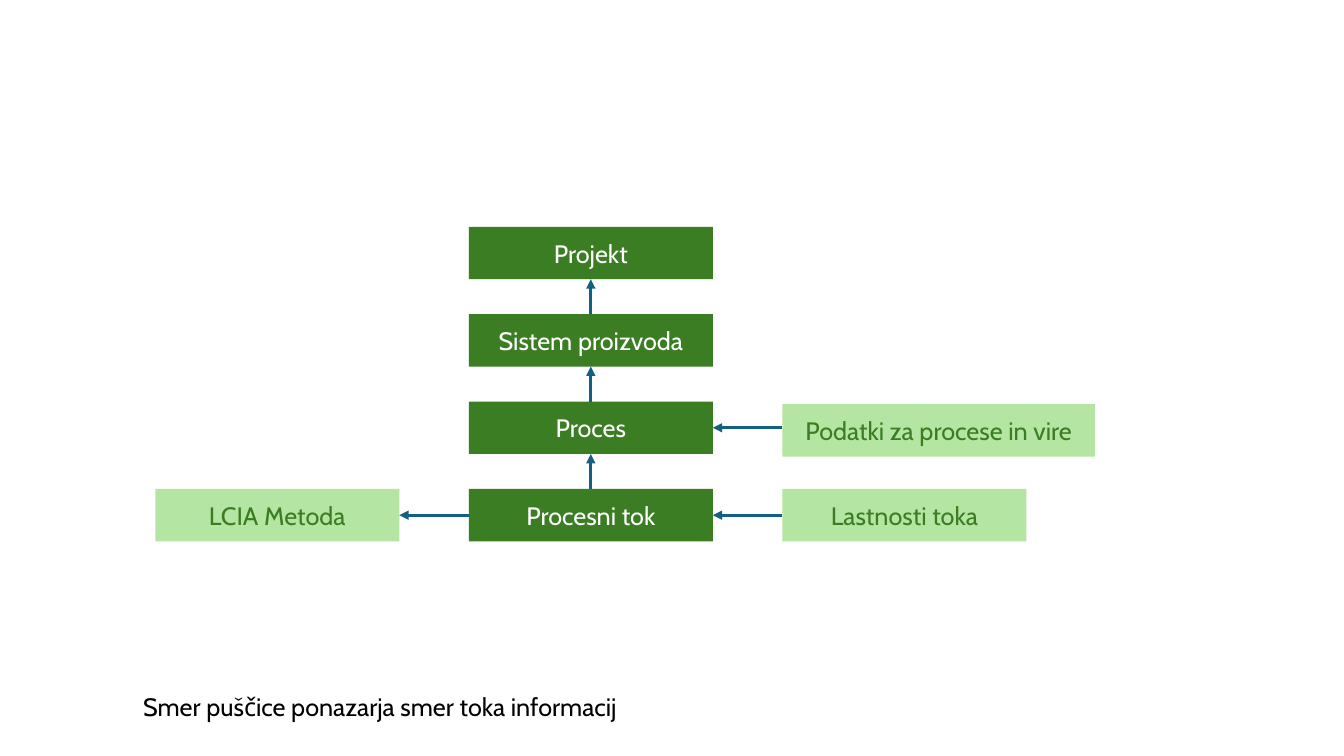
"""Builds the slide on how information flows between the elements of an LCA model."""
from pptx import Presentation
from pptx.dml.color import RGBColor
from pptx.enum.shapes import MSO_CONNECTOR as Link, MSO_SHAPE as Shape
from pptx.enum.text import MSO_ANCHOR as Anchor, MSO_AUTO_SIZE as Fit, PP_ALIGN as Align
from pptx.oxml.ns import qn
from pptx.util import Inches, Pt
from lxml.etree import SubElement

THEME = {
    "dark": RGBColor.from_string("3B7D23"),
    "light": RGBColor.from_string("B4E5A2"),
    "arrow": RGBColor.from_string("156082"),
    "white": RGBColor.from_string("FFFFFF"),
    "black": RGBColor.from_string("000000"),
    "font": "Cabin",
    "size": Pt(18),
    "line": Pt(2.25),
}
LEFT, TOP = 1.54, 2.25
COLUMN, ROW = 3.11, 0.867
WIDTH, HEIGHT = 2.42, 0.52
TOP_SITE, LEFT_SITE, BOTTOM_SITE, RIGHT_SITE = range(4)


def write(shape, text, color, align):
    """Put one styled line of text into a shape."""
    shape.text_frame.word_wrap = True
    para = shape.text_frame.paragraphs[0]
    para.alignment = align
    span = para.add_run()
    span.text = text
    for name, value in {"name": THEME["font"], "size": THEME["size"]}.items():
        setattr(span.font, name, value)
    span.font.color.rgb = THEME[color]


deck = Presentation()
deck.slide_width, deck.slide_height = Inches(13.33), Inches(7.5)
page = deck.slides.add_slide(deck.slide_layouts[6])

elements = [
    ("Projekt", 1, 0, WIDTH, "dark", "white"),
    ("Sistem proizvoda", 1, 1, WIDTH, "dark", "white"),
    ("Proces", 1, 2, WIDTH, "dark", "white"),
    ("Procesni tok", 1, 3, WIDTH, "dark", "white"),
    ("LCIA Metoda", 0, 3, WIDTH, "light", "dark"),
    ("Lastnosti toka", 2, 3, WIDTH, "light", "dark"),
    ("Podatki za procese in vire", 2, 2.03, 3.1, "light", "dark"),
]
boxes = {}
for text, column, row, width, fill, color in elements:
    box = page.shapes.add_shape(
        Shape.RECTANGLE, Inches(LEFT + column * COLUMN), Inches(TOP + row * ROW),
        Inches(width), Inches(HEIGHT))
    box.shadow.inherit = False
    box.fill.solid()
    box.fill.fore_color.rgb = THEME[fill]
    box.line.fill.background()
    box.text_frame.vertical_anchor = Anchor.MIDDLE
    write(box, text, color, Align.CENTER)
    boxes[text] = box

flows = [
    ("Sistem proizvoda", TOP_SITE, "Projekt", BOTTOM_SITE),
    ("Proces", TOP_SITE, "Sistem proizvoda", BOTTOM_SITE),
    ("Procesni tok", TOP_SITE, "Proces", BOTTOM_SITE),
    ("Procesni tok", LEFT_SITE, "LCIA Metoda", RIGHT_SITE),
    ("Lastnosti toka", LEFT_SITE, "Procesni tok", RIGHT_SITE),
    ("Podatki za procese in vire", LEFT_SITE, "Proces", RIGHT_SITE),
]
for source, start_site, target, end_site in flows:
    arrow = page.shapes.add_connector(Link.STRAIGHT, 0, 0, 0, 0)
    arrow.begin_connect(boxes[source], start_site)
    arrow.end_connect(boxes[target], end_site)
    if start_site == LEFT_SITE:
        arrow.begin_y = arrow.end_y
    arrow.line.color.rgb = THEME["arrow"]
    arrow.line.width = THEME["line"]
    SubElement(arrow.line._get_or_add_ln(), qn("a:tailEnd"), type="triangle")
    SubElement(arrow._element.spPr, qn("a:effectLst"))

caption = page.shapes.add_textbox(Inches(1.32), Inches(6.81), Inches(5.75), Inches(0.4))
caption.text_frame.auto_size = Fit.SHAPE_TO_FIT_TEXT
write(caption, "Smer puščice ponazarja smer toka informacij", "black", Align.LEFT)

deck.save("out.pptx")
